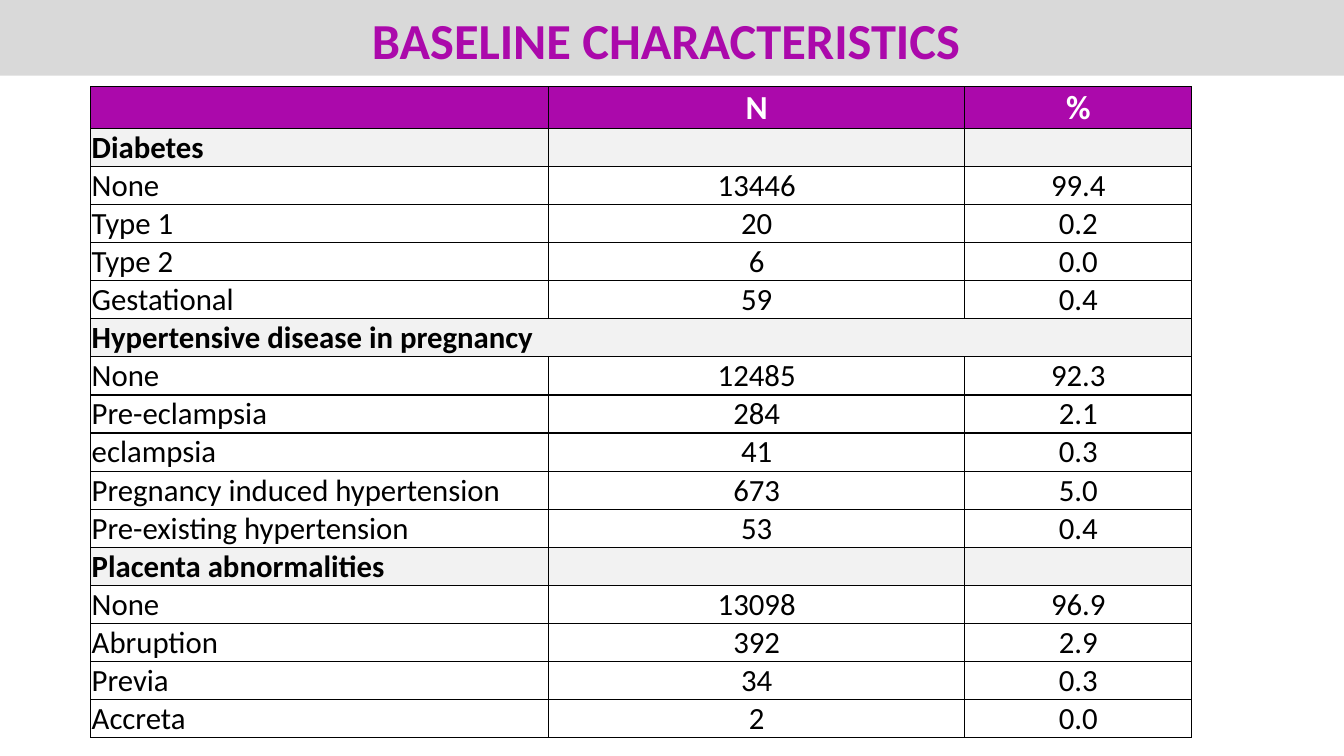
import pptx
import pptx.dml.color
import pptx.enum.text
import pptx.oxml
import pptx.oxml.ns
import pptx.util
from pptx.util import Inches

PURPLE = pptx.dml.color.RGBColor(0xAB, 0x09, 0xAB)
BAND_GREY = pptx.dml.color.RGBColor(0xD9, 0xD9, 0xD9)
SECTION_GREY = pptx.dml.color.RGBColor(0xF2, 0xF2, 0xF2)
WHITE = pptx.dml.color.RGBColor(0xFF, 0xFF, 0xFF)
BLACK = pptx.dml.color.RGBColor(0x00, 0x00, 0x00)
FONT = "Calibri"
CENTER = pptx.enum.text.PP_ALIGN.CENTER
LEFT = pptx.enum.text.PP_ALIGN.LEFT
BOTTOM = pptx.enum.text.MSO_ANCHOR.BOTTOM

COLUMN_WIDTHS = [4.54, 4.13, 2.25]
HEADER_HEIGHT = 0.41
TABLE_HEIGHT = 6.46
HEADER = ("", "N", "%")
SECTIONS = [
    ("Diabetes", [
        ("None", "13446", "99.4"),
        ("Type 1", "20", "0.2"),
        ("Type 2", "6", "0.0"),
        ("Gestational", "59", "0.4"),
    ]),
    ("Hypertensive disease in pregnancy", [
        ("None", "12485", "92.3"),
        ("Pre-eclampsia", "284", "2.1"),
        ("eclampsia", "41", "0.3"),
        ("Pregnancy induced hypertension", "673", "5.0"),
        ("Pre-existing hypertension", "53", "0.4"),
    ]),
    ("Placenta abnormalities", [
        ("None", "13098", "96.9"),
        ("Abruption", "392", "2.9"),
        ("Previa", "34", "0.3"),
        ("Accreta", "2", "0.0"),
    ]),
]
MERGED_SECTION = "Hypertensive disease in pregnancy"


def format_font(paragraph, size, color, bold):
    font = paragraph.font
    font.name = FONT
    font.size = pptx.util.Pt(size)
    font.bold = bold
    font.color.rgb = color


def add_title(slide, text):
    title = slide.shapes.title
    title.left, title.top = Inches(0), Inches(0)
    title.width, title.height = Inches(13.33), Inches(0.75)
    title.fill.solid()
    title.fill.fore_color.rgb = BAND_GREY
    title.text_frame.text = text
    title.text_frame.vertical_anchor = BOTTOM
    paragraph = title.text_frame.paragraphs[0]
    paragraph.alignment = CENTER
    paragraph.line_spacing = 0.9
    format_font(paragraph, 36, PURPLE, True)


def add_borders(cell):
    properties = cell._tc.get_or_add_tcPr()
    for side in ("lnL", "lnR", "lnT", "lnB"):
        properties.append(pptx.oxml.parse_xml(
            f'<a:{side} {pptx.oxml.ns.nsdecls("a")} w="12700"><a:solidFill>'
            f'<a:srgbClr val="{BLACK}"/></a:solidFill></a:{side}>'))


def fill_row(table, row, texts, size=22, color=BLACK, bold=False, fill=None):
    for column, text in enumerate(texts):
        cell = table.cell(row, column)
        cell.margin_left = cell.margin_right = Inches(0.01)
        cell.margin_top = pptx.util.Pt(0.4)
        cell.margin_bottom = 0
        cell.vertical_anchor = BOTTOM
        add_borders(cell)
        if fill is None:
            cell.fill.background()
        else:
            cell.fill.solid()
            cell.fill.fore_color.rgb = fill
        cell.text = text
        paragraph = cell.text_frame.paragraphs[0]
        paragraph.alignment = CENTER if column else LEFT
        format_font(paragraph, size, color, bold)


def add_characteristics_table(slide):
    row_count = 1 + sum(1 + len(rows) for _, rows in SECTIONS)
    table = slide.shapes.add_table(
        row_count, len(HEADER), Inches(0.9), Inches(0.86),
        Inches(sum(COLUMN_WIDTHS)), Inches(TABLE_HEIGHT)).table
    table.horz_banding = False
    for column, width in zip(table.columns, COLUMN_WIDTHS):
        column.width = Inches(width)
    for row in table.rows:
        row.height = Inches((TABLE_HEIGHT - HEADER_HEIGHT) / (row_count - 1))
    table.rows[0].height = Inches(HEADER_HEIGHT)

    # Header, then each section heading with its rows
    fill_row(table, 0, HEADER, size=24, color=WHITE, bold=True, fill=PURPLE)
    row = 1
    for heading, rows in SECTIONS:
        fill_row(table, row, (heading, "", ""), bold=True, fill=SECTION_GREY)
        if heading == MERGED_SECTION:
            table.cell(row, 0).merge(table.cell(row, len(HEADER) - 1))
        for row, texts in enumerate(rows, row + 1):
            fill_row(table, row, texts)
        row += 1


def main():
    presentation = pptx.Presentation()
    presentation.slide_width = Inches(13.33)
    presentation.slide_height = Inches(7.5)
    slide = presentation.slides.add_slide(presentation.slide_layouts[5])
    add_title(slide, "BASELINE CHARACTERISTICS ")
    add_characteristics_table(slide)
    presentation.save("out.pptx")


if __name__ == "__main__":
    main()
